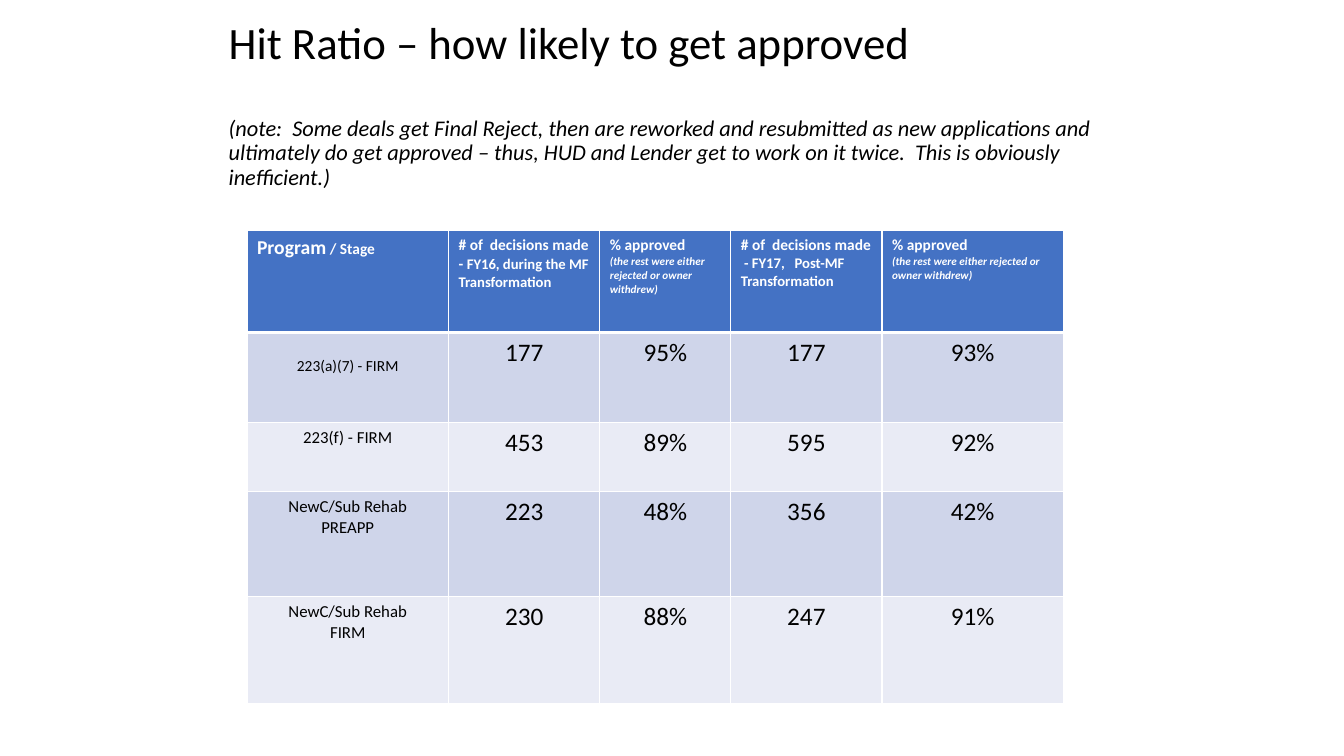
import pptx
import pptx.dml.color
import pptx.enum.text
import pptx.oxml
import pptx.oxml.ns
import pptx.util
from dataclasses import dataclass


@dataclass(frozen=True)
class Theme:
    font: str = "Calibri"
    ink: str = "000000"
    white: str = "FFFFFF"
    header: str = "4472C4"
    bands: tuple = ("CFD5EA", "E9EBF5")
    title: float = 32
    note: float = 16
    program: float = 14
    heading: float = 11
    period: float = 10.5
    remark: float = 8
    label: float = 12
    small_label: float = 11
    value: float = 18
    rule: float = 1
    header_rule: float = 3


THEME = Theme()
CENTER = pptx.enum.text.PP_ALIGN.CENTER
MIDDLE = pptx.enum.text.MSO_ANCHOR.MIDDLE

# Grid of 0.1 inch squares
SLIDE = (133.33, 75)
TITLE_BOX = (21.7, 0.8, 90, 19.3)
TABLE_ORIGIN = (24.5, 22.9)
COLUMNS = (20, 15, 13, 15, 18)
ROWS = (10.1, 8.9, 6.9, 10.4, 10.6)

TITLE = "Hit Ratio – how likely to get approved"
NOTE = ("(note:  Some deals get Final Reject, then are reworked and resubmitted "
        "as new applications and ultimately do get approved – thus, HUD and "
        "Lender get to work on it twice.  This is obviously inefficient.)")
REMARK = "(the rest were either rejected or owner withdrew)"

# Row label lines, label size, label top margin, values
RESULTS = (
    (["223(a)(7) - FIRM"], THEME.small_label, 2.4, ("177", "95%", "177", "93%")),
    (["223(f) - FIRM"], THEME.label, 0.5, ("453", "89%", "595", "92%")),
    (["NewC/Sub Rehab", "PREAPP"], THEME.label, 0.5, ("223", "48%", "356", "42%")),
    (["NewC/Sub Rehab", "FIRM"], THEME.label, 0.5, ("230", "88%", "247", "91%")),
)


def grid(squares):
    return pptx.util.Inches(squares / 10)


def rgb(color):
    return pptx.dml.color.RGBColor.from_string(color)


def add_text(p, text, size, color=THEME.ink, bold=False, italic=False):
    r = p.add_run()
    r.text = text
    r.font.name = THEME.font
    r.font.size = pptx.util.Pt(size)
    r.font.bold = bold
    r.font.italic = italic
    r.font.color.rgb = rgb(color)


def add_title(s):
    sp = s.shapes.add_textbox(*map(grid, TITLE_BOX))
    tf = sp.text_frame
    tf.word_wrap = True
    tf.vertical_anchor = MIDDLE
    add_text(tf.paragraphs[0], TITLE, THEME.title)
    p = tf.add_paragraph()
    p.space_before = pptx.util.Pt(34.5)
    add_text(p, NOTE, THEME.note, italic=True)
    for p in tf.paragraphs:
        p.line_spacing = 0.9


def set_borders(cell, **widths):
    tc_pr = cell._tc.get_or_add_tcPr()
    for index, side in enumerate("LRTB"):
        width = pptx.util.Pt(widths.get(side, THEME.rule))
        line = pptx.oxml.parse_xml(
            f'<a:ln{side} {pptx.oxml.ns.nsdecls("a")} w="{int(width)}">'
            f'<a:solidFill><a:srgbClr val="{THEME.white}"/></a:solidFill>'
            f'</a:ln{side}>')
        tc_pr.insert(index, line)


def fill_cell(cell, color, paragraphs, align=None, margin_top=0.5, **borders):
    """Each paragraph is a list of (text, format) runs."""
    cell.fill.solid()
    cell.fill.fore_color.rgb = rgb(color)
    cell.margin_top = grid(margin_top)
    set_borders(cell, **borders)
    tf = cell.text_frame
    for index, runs in enumerate(paragraphs):
        p = tf.add_paragraph() if index else tf.paragraphs[0]
        p.alignment = align
        for text, style in runs:
            add_text(p, text, **style)


def header_cells():
    def style(size, italic=False):
        return dict(size=size, color=THEME.white, bold=True, italic=italic)

    heading, period = style(THEME.heading), style(THEME.period)
    approved = [[("% approved", heading)],
                [(REMARK, style(THEME.remark, italic=True))]]
    return (
        [[("Program", style(THEME.program)), (" / Stage", heading)]],
        [[("# of  decisions made - ", heading),
          ("FY16, during the MF Transformation", period)]],
        approved,
        [[("# of  decisions made ", heading),
          (" - FY17,   Post-MF Transformation", period)]],
        approved,
    )


def add_results_table(s):
    size = (sum(COLUMNS), sum(ROWS))
    table = s.shapes.add_table(len(ROWS), len(COLUMNS),
                               *map(grid, TABLE_ORIGIN + size)).table
    for column, width in zip(table.columns, COLUMNS):
        column.width = grid(width)
    for row, height in zip(table.rows, ROWS):
        row.height = grid(height)

    # Header row
    for col, paragraphs in enumerate(header_cells()):
        fill_cell(table.cell(0, col), THEME.header, paragraphs,
                  B=THEME.header_rule)

    # Banded result rows
    for row, (lines, label_size, margin, values) in enumerate(RESULTS, start=1):
        band = THEME.bands[(row - 1) % 2]
        top = THEME.header_rule if row == 1 else THEME.rule
        label = [[(line, dict(size=label_size))] for line in lines]
        fill_cell(table.cell(row, 0), band, label, CENTER, margin, T=top)
        for col, value in enumerate(values, start=1):
            fill_cell(table.cell(row, col), band,
                      [[(value, dict(size=THEME.value))]], CENTER, T=top)


def main():
    prs = pptx.Presentation()
    prs.slide_width, prs.slide_height = map(grid, SLIDE)
    s = prs.slides.add_slide(prs.slide_layouts[6])
    add_title(s)
    add_results_table(s)
    prs.save("out.pptx")


if __name__ == "__main__":
    main()
